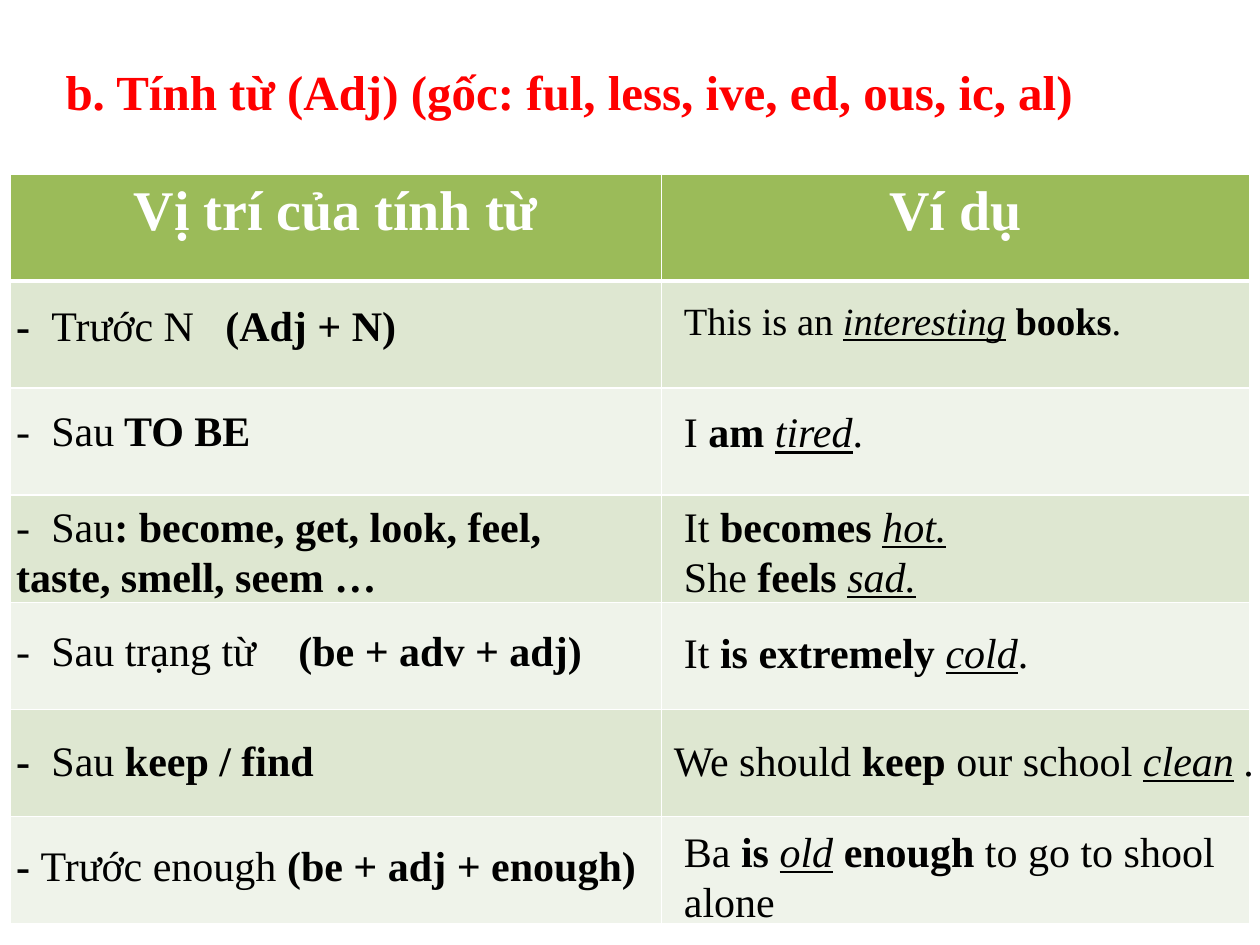
from dataclasses import dataclass

from lxml.etree import SubElement
from pptx import Presentation
from pptx.dml.color import RGBColor
from pptx.enum.text import MSO_ANCHOR, MSO_AUTO_SIZE, PP_ALIGN
from pptx.oxml import parse_xml
from pptx.oxml.ns import nsdecls, qn
from pptx.util import Inches, Pt


@dataclass(frozen=True)
class Theme:
    font: str = "Times New Roman"
    title: str = "FF0000"
    ink: str = "000000"
    white: str = "FFFFFF"
    header: str = "9BBB59"
    bands: tuple = ("DEE7D1", "EFF3EA")
    title_pt: int = 28
    header_pt: int = 32
    body_pt: int = 24
    small_pt: int = 22


T = Theme()
LEFT, TOP, ROW_H = 0.08, 1.38, 0.85
COLS = (5.17, 4.67)
HEADERS = ("Vị trí của tính từ", "Ví dụ")


@dataclass(frozen=True)
class Note:
    """Text over a table cell; dx and dy are offsets from the cell's corner."""
    paras: list
    dx: float
    dy: float
    w: float
    h: float = 0.91
    size: int = T.body_pt
    tabs: tuple = ()


# One pair per table row: the rule and its example.
# A run is (text, style), with b = bold, i = italic, u = underlined.
ROWS = [
    (Note([[("-\t", "b"), ("Trước N\t", ""), ("(Adj + N)", "b")]],
          -0.05, 0.10, 4.58, tabs=(0.28, 1.66)),
     Note([[("This is an ", ""), ("interesting", "iu"), (" ", ""),
            ("books", "b"), (".", "")]],
          0.08, 0.08, 4.67, 0.84, T.small_pt)),
    (Note([[("-\tSau", ""), (" TO BE", "b")]],
          -0.05, 0.08, 4.5, tabs=(0.28,)),
     Note([[("I ", ""), ("am ", "b"), ("tired", "iu"), (".", "")]],
          0.08, 0.09, 4.33)),
    (Note([[("-\tSau", ""),
            (": become, get, look, feel, taste, smell, seem …", "b")]],
          -0.05, -0.01, 4.67, 1.31, tabs=(0.28,)),
     Note([[("It ", ""), ("becomes ", "b"), ("hot.", "iu")],
           [("She ", ""), ("feels ", "b"), ("sad.", "iu")]],
          0.08, -0.01, 4.42, 1.31)),
    (Note([[("-\tSau trạng từ\t", ""), ("(be + adv + adj)", "b")]],
          -0.05, 0.13, 4.97, tabs=(0.28, 2.24)),
     Note([[("It ", ""), ("is extremely ", "b"), ("cold", "iu"), (".", "")]],
          0.08, 0.14, 4.67)),
    (Note([[("-\t", "b"), ("Sau ", ""), ("keep / find", "b")]],
          -0.05, 0.15, 4.42, 0.5, tabs=(0.28,)),
     Note([[("We should ", ""), ("keep", "b"), (" our school ", ""),
            ("clean", "iu"), (" ", ""), (".", "i")]],
          0, 0.15, 5.08, 0.5)),
    (Note([[("- ", "b"), ("Trước enough ", ""),
            ("(be + adj + enough)", "b")]],
          -0.05, 0.13, 5.3, 0.5),
     Note([[("Ba ", ""), ("is ", "b"), ("old", "iu"), (" ", ""),
            ("enough", "b"), (" to go to shool alone", "")]],
          0.08, 0.02, 4.67)),
]


def add_run(p, text, style, size, color):
    r = p.add_run()
    r.text = text
    f = r.font
    f.name, f.size = T.font, Pt(size)
    f.color.rgb = RGBColor.from_string(color)
    f.bold, f.italic, f.underline = (k in style for k in "biu")


def set_tabs(p, stops):
    tab_list = SubElement(p._p.get_or_add_pPr(), qn("a:tabLst"))
    for stop in stops:
        SubElement(tab_list, qn("a:tab"), pos=str(Inches(stop)), algn="l")


def style_cell(cell, fill, bottom_pt=1):
    cell.fill.solid()
    cell.fill.fore_color.rgb = RGBColor.from_string(fill)
    tcPr = cell._tc.get_or_add_tcPr()
    for i, side in enumerate("LRTB"):
        width = Pt(bottom_pt if side == "B" else 1)
        tcPr.insert(i, parse_xml(
            f'<a:ln{side} {nsdecls("a")} w="{width}"><a:solidFill>'
            f'<a:srgbClr val="{T.white}"/></a:solidFill></a:ln{side}>'))


def add_title(s, x, y, w, h):
    sp = s.shapes.title
    sp.left, sp.top, sp.width, sp.height = map(Inches, (x, y, w, h))
    tf = sp.text_frame
    tf.word_wrap = True
    tf.vertical_anchor = MSO_ANCHOR.TOP
    tf.auto_size = MSO_AUTO_SIZE.SHAPE_TO_FIT_TEXT
    p = tf.paragraphs[0]
    p.alignment = PP_ALIGN.LEFT
    add_run(p, "b. Tính từ (Adj) (gốc: ful, less, ive, ed, ous, ic, al)",
            "b", T.title_pt, T.title)


def add_note(s, note, x, y):
    box = (x + note.dx, y + note.dy, note.w, note.h)
    tf = s.shapes.add_textbox(*map(Inches, box)).text_frame
    tf.word_wrap = True
    tf.auto_size = MSO_AUTO_SIZE.SHAPE_TO_FIT_TEXT
    for i, runs in enumerate(note.paras):
        p = tf.add_paragraph() if i else tf.paragraphs[0]
        if note.tabs:
            set_tabs(p, note.tabs)
        for text, style in runs:
            add_run(p, text, style, note.size, T.ink)


def add_grammar_table(s, x, y):
    # Banded grid
    n = len(ROWS) + 1
    table = s.shapes.add_table(n, len(COLS), Inches(x), Inches(y),
                               Inches(sum(COLS)), Inches(n * ROW_H)).table
    for row in table.rows:
        row.height = Inches(ROW_H)
    for c, width in enumerate(COLS):
        table.columns[c].width = Inches(width)
        head = table.cell(0, c)
        style_cell(head, T.header, bottom_pt=3)
        p = head.text_frame.paragraphs[0]
        p.alignment = PP_ALIGN.CENTER
        add_run(p, HEADERS[c], "b", T.header_pt, T.white)
        for r in range(1, n):
            style_cell(table.cell(r, c), T.bands[(r - 1) % 2])
    # Rules and examples over the cells
    for r, pair in enumerate(ROWS, start=1):
        for c, note in enumerate(pair):
            add_note(s, note, x + sum(COLS[:c]), y + r * ROW_H)


def main():
    prs = Presentation()
    prs.slide_width, prs.slide_height = Inches(10), Inches(7.5)
    s = prs.slides.add_slide(prs.slide_layouts[5])
    add_title(s, 0.42, 0.44, 9.25, 0.57)
    add_grammar_table(s, LEFT, TOP)
    prs.save("out.pptx")


if __name__ == "__main__":
    main()
